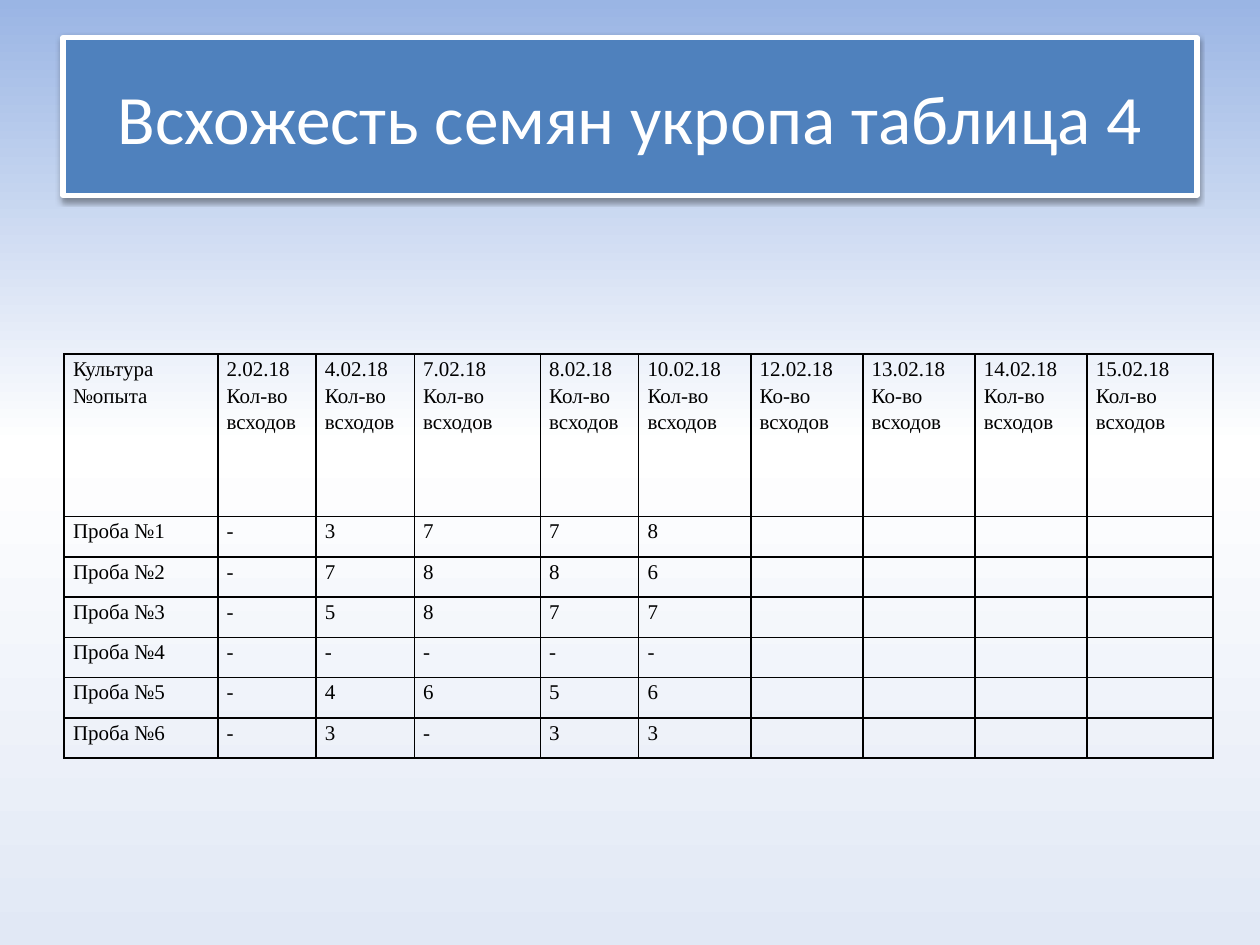
from copy import deepcopy
from dataclasses import dataclass

from pptx import Presentation
from pptx.dml.color import RGBColor as Rgb
from pptx.enum.shapes import MSO_SHAPE as Shape
from pptx.enum.text import MSO_ANCHOR as Anchor, PP_ALIGN as Align
from pptx.oxml import parse_xml
from pptx.oxml.ns import nsdecls, qn
from pptx.util import Inches, Pt


@dataclass(frozen=True)
class Theme:
    """Colours, fonts and type sizes of the slide."""
    sky: tuple = ((0, "9AB5E4"), (0.47, "FFFFFF"), (1, "E1E8F5"))
    blue: str = "4F81BD"
    white: str = "FFFFFF"
    ink: str = "000000"
    head: str = "Calibri"
    body: str = "Times New Roman"
    big: float = 39.6
    small: float = 12


THEME = Theme()
TITLE = "Всхожесть семян укропа таблица 4"
DATES = (2, 4, 7, 8, 10, 12, 13, 14, 15)
TYPOS = (12, 13)
TESTS = ("-3778", "-7886", "-5877", "-----", "-4656", "-3-33")
WIDTHS = (1.22, 0.78, 0.78, 1, 0.78, 0.89, 0.89, 0.89, 0.89, 1)
HEIGHTS = (1.29,) + (0.32,) * len(TESTS)


def apply(item, values):
    """Set each named attribute of an item."""
    for name, value in values.items():
        setattr(item, name, value)


def style(part, align, face, size, tint, gap=1.0):
    """Format a paragraph and its runs."""
    apply(part, {"alignment": align, "line_spacing": gap})
    for run in part.runs:
        apply(run.font, {"name": face, "size": Pt(size), "bold": False})
        run.font.color.rgb = Rgb.from_string(tint)


def paint_sky(slide):
    """Fill the background with a vertical gradient."""
    fill = slide.background.fill
    fill.gradient()
    fill.gradient_angle = 270
    stops = slide.element.find(".//" + qn("a:gsLst"))
    stops.append(deepcopy(stops[-1]))
    for stop, (place, tint) in zip(fill.gradient_stops, THEME.sky):
        stop.position = place
        stop.color.rgb = Rgb.from_string(tint)


def add_title(slide, box):
    """Place the framed title with its soft shadow."""
    panel = slide.shapes.add_shape(Shape.RECTANGLE, *map(Inches, box))
    panel.fill.solid()
    panel.fill.fore_color.rgb = Rgb.from_string(THEME.blue)
    panel.line.color.rgb = Rgb.from_string(THEME.white)
    panel.line.width = Pt(3)
    panel.shadow.inherit = False
    glow = parse_xml(
        f'<a:outerShdw {nsdecls("a")} blurRad="{Pt(3.1)}" dist="{Pt(1.6)}" '
        f'dir="5400000" rotWithShape="0"><a:srgbClr val="{THEME.ink}">'
        '<a:alpha val="38000"/></a:srgbClr></a:outerShdw>')
    panel.element.spPr.find(qn("a:effectLst")).append(glow)
    frame = panel.text_frame
    apply(frame, {"text": TITLE, "word_wrap": True,
                  "vertical_anchor": Anchor.MIDDLE})
    style(frame.paragraphs[0], Align.CENTER, THEME.head, THEME.big, THEME.white)


def add_rules(cell):
    """Draw thin rules on all four sides of a cell."""
    props = cell._tc.get_or_add_tcPr()
    for side in "LRTB":
        props.append(parse_xml(
            f'<a:ln{side} {nsdecls("a")} w="{Pt(1)}"><a:solidFill>'
            f'<a:srgbClr val="{THEME.ink}"/></a:solidFill></a:ln{side}>'))


def fill_cell(cell, text):
    """Write and format one table cell."""
    add_rules(cell)
    cell.fill.background()
    apply(cell, {"text": text, "margin_left": Inches(0.07),
                 "margin_right": Inches(0.07),
                 "margin_top": 0, "margin_bottom": 0})
    for part in cell.text_frame.paragraphs:
        style(part, Align.JUSTIFY, THEME.body, THEME.small, THEME.ink, 1.15)


def list_rows():
    """Return the wording of the table, row by row."""
    head = ["Культура\n№опыта"]
    for day in DATES:
        count = "Ко-во" if day in TYPOS else "Кол-во"
        head.append(f"{day}.02.18\n{count}\nвсходов")
    rows = [head]
    for index, marks in enumerate(TESTS, 1):
        rows.append([f"Проба №{index}", *marks.ljust(len(DATES))])
    return rows


def add_grid(slide, box):
    """Place the table of sprouted seeds."""
    shape = slide.shapes.add_table(len(HEIGHTS), len(WIDTHS),
                                   *map(Inches, box))
    table = shape.table
    apply(table, {"first_row": False, "horz_banding": False})
    for column, width in zip(table.columns, WIDTHS):
        column.width = Inches(width)
    for row, height, texts in zip(table.rows, HEIGHTS, list_rows()):
        row.height = Inches(height)
        for cell, text in zip(row.cells, texts):
            fill_cell(cell, text.strip())


def main():
    """Build and save the slide."""
    deck = Presentation()
    apply(deck, {"slide_width": Inches(10), "slide_height": Inches(7.5)})
    slide = deck.slides.add_slide(deck.slide_layouts[6])
    paint_sky(slide)
    add_title(slide, (0.5, 0.3, 9, 1.25))
    add_grid(slide, (0.51, 2.81, sum(WIDTHS), sum(HEIGHTS)))
    deck.save("out.pptx")


if __name__ == "__main__":
    main()
